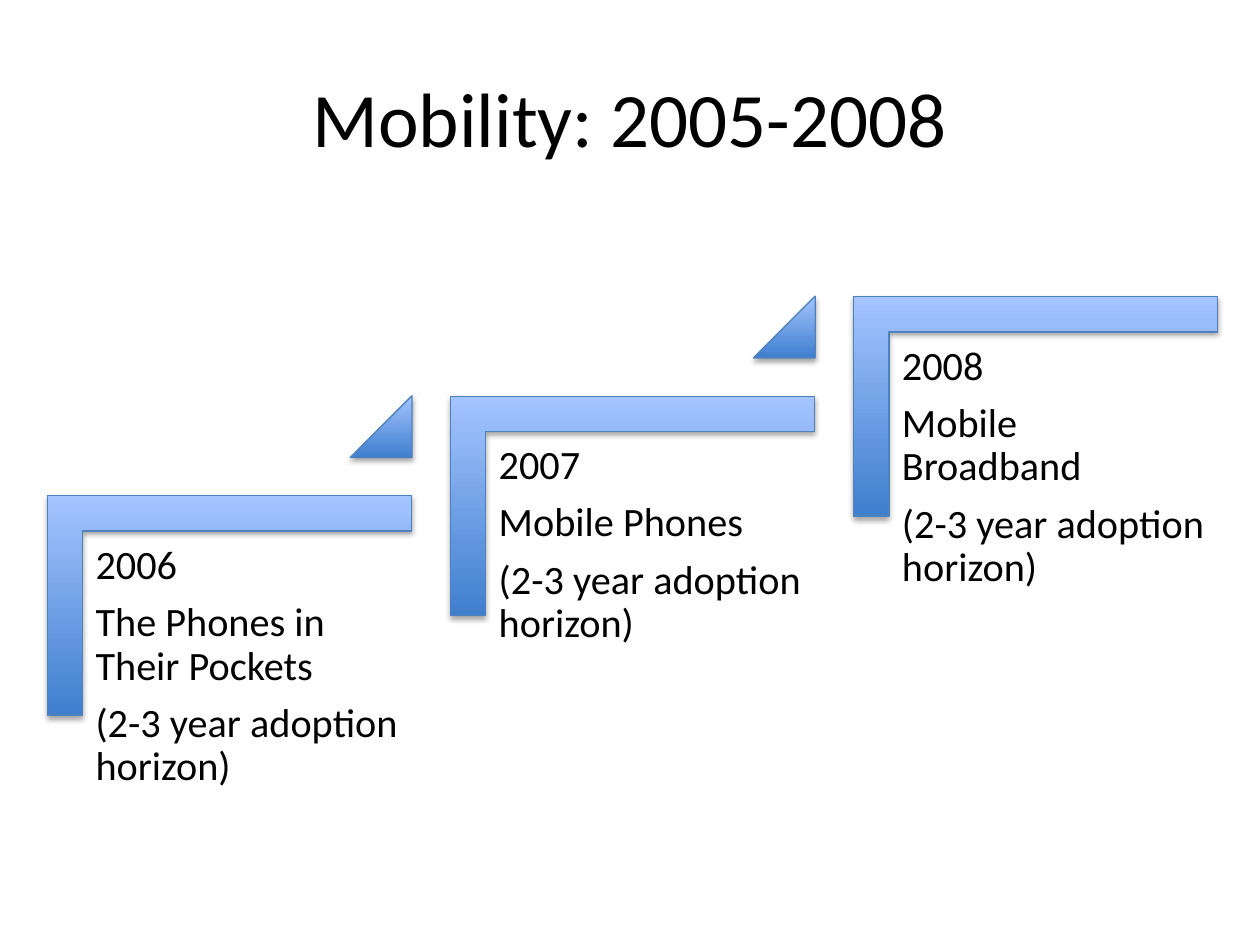
from dataclasses import dataclass

from lxml.etree import SubElement
from pptx import Presentation
from pptx.dml.color import RGBColor as RGB
from pptx.enum.shapes import MSO_SHAPE as SHAPE
from pptx.enum.text import MSO_ANCHOR as ANCHOR, PP_ALIGN as ALIGN
from pptx.oxml.ns import qn
from pptx.util import Inches, Pt


@dataclass(frozen=True)
class Theme:
    font: str = "Calibri"
    text: RGB = RGB.from_string("000000")
    line: RGB = RGB.from_string("4F81BD")
    gradient: tuple = (RGB.from_string("3F7FCE"), RGB.from_string("A4C4FF"))
    title_size: int = 44
    body_size: int = 23


class StepSlide:
    def __init__(self, slide, theme):
        self.slide = slide
        self.theme = theme

    def style_text(self, p, size):
        for r in p.runs:
            r.font.name = self.theme.font
            r.font.size = Pt(size)
            r.font.color.rgb = self.theme.text

    def title(self, text, left, top, width, height):
        sp = self.slide.shapes.title
        sp.left, sp.top = Inches(left), Inches(top)
        sp.width, sp.height = Inches(width), Inches(height)
        tf = sp.text_frame
        tf.text = text
        tf.vertical_anchor = ANCHOR.MIDDLE
        p = tf.paragraphs[0]
        p.alignment = ALIGN.CENTER
        self.style_text(p, self.theme.title_size)

    def shadow(self, sp):
        sp.shadow.inherit = False
        effects = sp._element.spPr.find(qn("a:effectLst"))
        outer = SubElement(effects, qn("a:outerShdw"), blurRad=str(Pt(3.1)),
                           dist=str(Pt(1.8)), dir="5400000", rotWithShape="0")
        color = SubElement(outer, qn("a:srgbClr"), val="000000")
        SubElement(color, qn("a:alpha"), val="35000")

    def shape(self, kind, left, top, width, height):
        sp = self.slide.shapes.add_shape(
            kind, Inches(left), Inches(top), Inches(width), Inches(height))
        sp.fill.gradient()
        sp.fill.gradient_angle = 90
        for stop, color in zip(sp.fill.gradient_stops, self.theme.gradient):
            stop.color.rgb = color
        sp._element.spPr.find(qn("a:gradFill")).set("rotWithShape", "0")
        sp.line.color.rgb = self.theme.line
        sp.line.width = Pt(0.75)
        self.shadow(sp)
        return sp

    def corner(self, left, top):
        sp = self.shape(SHAPE.RECTANGLE, left, top, 1.74, 2.89)
        sp.rotation = 90
        geometry = sp._element.spPr.find(qn("a:prstGeom"))
        geometry.set("prst", "corner")
        guides = geometry.find(qn("a:avLst"))
        for name in ("adj1", "adj2"):
            SubElement(guides, qn("a:gd"), name=name, fmla="val 16100")

    def triangle(self, left, top):
        sp = self.shape(SHAPE.ISOSCELES_TRIANGLE, left, top, 0.49, 0.49)
        sp.adjustments[0] = 1

    def text(self, lines, left, top, width, height):
        sp = self.slide.shapes.add_textbox(
            Inches(left), Inches(top), Inches(width), Inches(height))
        tf = sp.text_frame
        tf.word_wrap = True
        tf.margin_left = tf.margin_right = Inches(0.1)
        tf.margin_top = tf.margin_bottom = Inches(0.1)
        tf.text = "\n".join(lines)
        for p in tf.paragraphs:
            p.line_spacing = 0.9
            p.space_after = Pt(8)
            self.style_text(p, self.theme.body_size)


def main():
    prs = Presentation()
    prs.slide_width, prs.slide_height = Inches(10), Inches(7.5)
    page = StepSlide(prs.slides.add_slide(prs.slide_layouts[5]), Theme())
    page.title("Mobility: 2005-2008", 0.5, 0.3, 9, 1.25)

    steps = [("2006", "The Phones in Their Pockets"),
             ("2007", "Mobile Phones"),
             ("2008", "Mobile Broadband")]
    step_x, step_y = 3.2, 0.79
    for i, (year, topic) in enumerate(steps):
        x, y = i * step_x, -i * step_y
        page.corner(0.95 + x, 3.36 + y)
        page.text((year, topic, "(2-3 year adoption horizon)"),
                  0.66 + x, 4.22 + y, 2.61, 2.29)
        if i < len(steps) - 1:
            page.triangle(2.78 + x, 3.14 + y)

    prs.save("out.pptx")


if __name__ == "__main__":
    main()
